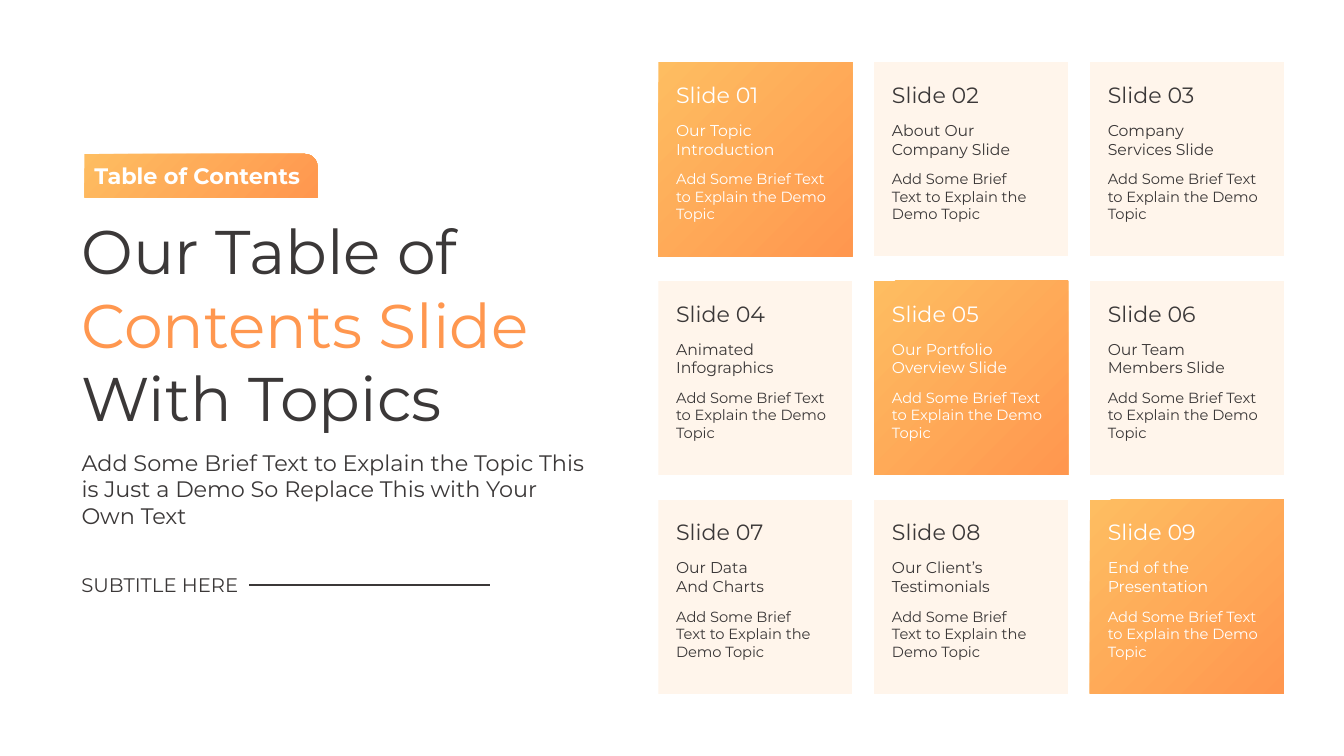
from pptx import Presentation
from pptx.dml.color import RGBColor
from pptx.enum.shapes import MSO_CONNECTOR as CONN, MSO_SHAPE as SHAPE
from pptx.enum.text import MSO_ANCHOR as ANCHOR, MSO_AUTO_SIZE as AUTO, PP_ALIGN as ALIGN
from pptx.oxml.ns import qn
from pptx.util import Cm, Pt
from lxml.etree import SubElement

TAG = "Table of Contents"
SUBTITLE = "SUBTITLE HERE"
INTRO = "Add Some Brief Text to Explain the Topic This is Just a Demo So Replace This with Your Own Text"
DETAIL = "Add Some Brief Text to Explain the Demo Topic"
TOPICS = [
    ("Our Topic", "Introduction"),
    ("About Our", "Company Slide"),
    ("Company", "Services Slide"),
    ("Animated", "Infographics"),
    ("Our Portfolio", "Overview Slide"),
    ("Our Team", "Members Slide"),
    ("Our Data", "And Charts"),
    ("Our Client’s", "Testimonials"),
    ("End of the", "Presentation"),
]
HIGHLIGHTED = {1, 5, 9}
NARROW = {2, 7, 8}

FONT = "Montserrat"
DARK = RGBColor(0x3B, 0x38, 0x38)
WHITE = RGBColor(0xFF, 0xFF, 0xFF)
ORANGE = RGBColor(0xFF, 0x97, 0x4F)
YELLOW = RGBColor(0xFE, 0xBD, 0x61)
CREAM = RGBColor(0xFF, 0xF5, 0xEB)
LIGHT_CREAM = RGBColor(0xFF, 0xF8, 0xEB)
TITLE = [("Our Table of", DARK), ("Contents Slide", ORANGE), ("With Topics", DARK)]

COLUMNS = 3
CARD = 4.89
GRID_LEFT, GRID_TOP = 16.59, 1.57
STEP_X, STEP_Y = 5.44, 5.51
LEFT, TEXT_WIDTH = 1.8, 13.34


def write(tf, lines, size, bold=False):
    """Write (text, colour) lines as left-aligned paragraphs."""
    tf.word_wrap = True
    tf.auto_size = AUTO.NONE
    for i, (text, color) in enumerate(lines):
        p = tf.paragraphs[0] if i == 0 else tf.add_paragraph()
        p.alignment = ALIGN.LEFT
        p.space_before = Pt(0)
        r = p.add_run()
        r.text = text
        r.font.name = FONT
        r.font.size = Pt(size)
        r.font.bold = bold
        r.font.color.rgb = color


def place(sp, left, top, width, height):
    """Move and size a placeholder given in centimetres."""
    sp.left, sp.top, sp.width, sp.height = Cm(left), Cm(top), Cm(width), Cm(height)
    sp.text_frame.vertical_anchor = ANCHOR.TOP


def add_text(s, left, top, width, height, lines, size):
    """Add a text box given in centimetres."""
    sp = s.shapes.add_textbox(Cm(left), Cm(top), Cm(width), Cm(height))
    write(sp.text_frame, lines, size)


def add_block(s, kind, left, top, width, height, colors, radial):
    """Add a gradient block, radial from its lower right corner or linear."""
    sp = s.shapes.add_shape(kind, Cm(left), Cm(top), Cm(width), Cm(height))
    sp.shadow.inherit = False
    sp.line.fill.background()
    sp.fill.gradient()
    for stop, color in zip(sp.fill.gradient_stops, colors):
        stop.color.rgb = color
    if radial:
        grad = sp._element.spPr.find(qn("a:gradFill"))
        grad.remove(grad.find(qn("a:lin")))
        circle = SubElement(grad, qn("a:path"), {"path": "circle"})
        SubElement(circle, qn("a:fillToRect"), {"l": "100000", "t": "100000"})
    else:
        sp.fill.gradient_angle = 45
    return sp


def add_card(s, number, topic):
    """Add one numbered card at its grid place."""
    row, col = divmod(number - 1, COLUMNS)
    left, top = GRID_LEFT + col * STEP_X, GRID_TOP + row * STEP_Y
    bright = number in HIGHLIGHTED
    fills = (ORANGE, YELLOW) if bright else (CREAM, LIGHT_CREAM)
    color = WHITE if bright else DARK
    add_block(s, SHAPE.RECTANGLE, left, top, CARD, CARD, fills, bright)
    x = left + 0.2
    add_text(s, x, top + 0.36, 4.3, 0.94, [(f"Slide {number:02}", color)], 15.8)
    add_text(s, x, top + 1.35, 4.3, 1.22, [(line, color) for line in topic], 11.2)
    width = 4.2 if number in NARROW else 4.33
    add_text(s, x, top + 2.59, width, 1.6, [(DETAIL, color)], 10.5)


def main():
    """Build the table of contents slide."""
    prs = Presentation()
    prs.slide_width, prs.slide_height = Cm(33.87), Cm(19.05)
    s = prs.slides.add_slide(prs.slide_layouts[0])

    title, intro = s.shapes.title, s.placeholders[1]
    place(title, LEFT, 5.23, TEXT_WIDTH, 5.89)
    write(title.text_frame, TITLE, 44)
    place(intro, LEFT, 11.18, TEXT_WIDTH, 2.31)
    write(intro.text_frame, [(INTRO, DARK)], 16)

    tag = add_block(s, SHAPE.ROUND_1_RECTANGLE, 2.13, 3.88, 5.87, 1.1, (ORANGE, YELLOW), True)
    tag.adjustments[0] = 0.29
    tag.text_frame.margin_right = 0
    tag.text_frame.vertical_anchor = ANCHOR.MIDDLE
    write(tag.text_frame, [(TAG, WHITE)], 16, bold=True)

    add_text(s, LEFT, 14.3, 4.6, 0.86, [(SUBTITLE, DARK)], 14)
    rule = s.shapes.add_connector(CONN.STRAIGHT, Cm(6.28), Cm(14.73), Cm(12.36), Cm(14.73))
    rule.line.color.rgb = DARK
    rule.line.width = Pt(1.5)
    SubElement(rule._element.spPr, qn("a:effectLst"))

    for number, topic in enumerate(TOPICS, 1):
        add_card(s, number, topic)
    prs.save("out.pptx")


if __name__ == "__main__":
    main()
